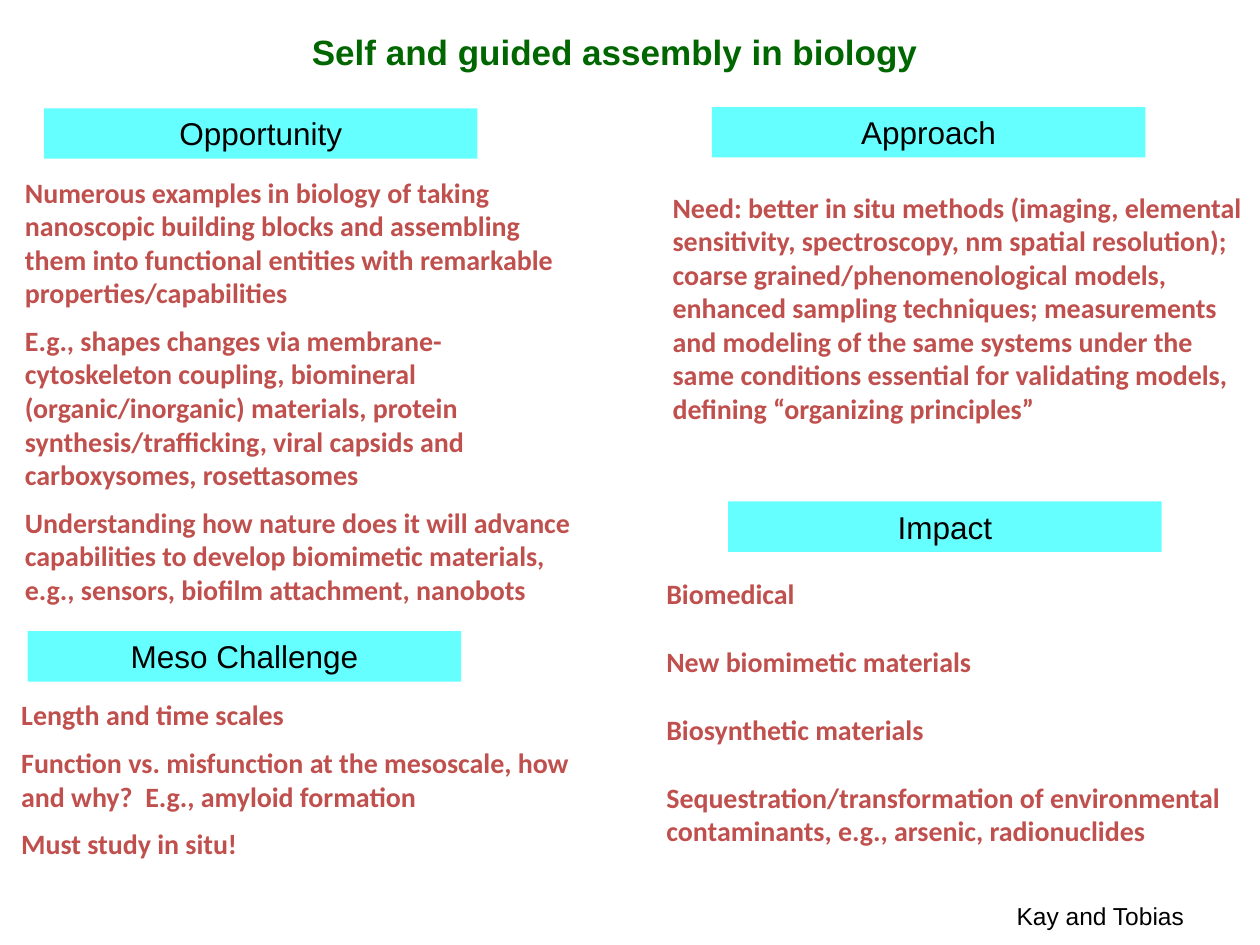
from dataclasses import dataclass

from pptx import Presentation
from pptx.dml.color import RGBColor
from pptx.enum.shapes import MSO_SHAPE
from pptx.enum.text import MSO_ANCHOR, MSO_AUTO_SIZE, PP_ALIGN
from pptx.util import Inches, Pt

RECTANGLE = MSO_SHAPE.RECTANGLE
CENTER, LEFT = PP_ALIGN.CENTER, PP_ALIGN.LEFT
TOP = MSO_ANCHOR.TOP
GROW = MSO_AUTO_SIZE.SHAPE_TO_FIT_TEXT
COLUMNS, ROWS = 100, 75


@dataclass(frozen=True)
class TextStyle:
    size: int
    font: str
    color: str
    bold: bool = False


@dataclass(frozen=True)
class Theme:
    title: TextStyle = TextStyle(20, "Arial", "006600", True)
    heading: TextStyle = TextStyle(18, "Arial", "000000")
    body: TextStyle = TextStyle(16, "Calibri", "C0504D", True)
    credit: TextStyle = TextStyle(14, "Arial", "000000")
    heading_fill: str = "66FFFF"
    paragraph_gap: float = 8
    line_gap: float = 19.5


THEME = Theme()
HEADING_SIZE = (34.4, 4)

HEADINGS = [
    ("Opportunity", 3.5, 8.6),
    ("Meso Challenge", 2.2, 50.1),
    ("Approach", 5.65 * 10, 8.5),
    ("Impact", 57.8, 39.8),
]

BODIES = [
    ((52.4, 14.6, 47.6, 19.7), 0, [
        "Need: better in situ methods (imaging, elemental sensitivity, spectroscopy, "
        "nm spatial resolution); coarse grained/phenomenological models, enhanced "
        "sampling techniques; measurements and modeling of the same systems under the "
        "same conditions essential for validating models, defining “organizing principles”",
    ]),
    ((1, 13.4, 46.6, 39.8), THEME.paragraph_gap, [
        "Numerous examples in biology of taking nanoscopic building blocks and "
        "assembling them into functional entities with remarkable properties/capabilities",
        "E.g., shapes changes via membrane-cytoskeleton coupling, biomineral "
        "(organic/inorganic) materials, protein synthesis/trafficking, viral capsids "
        "and carboxysomes, rosettasomes",
        "Understanding how nature does it will advance capabilities to develop "
        "biomimetic materials, e.g., sensors, biofilm attachment, nanobots",
    ]),
    ((0.7, 54.9, 47.5, 14.4), THEME.paragraph_gap, [
        "Length and time scales",
        "Function vs. misfunction at the mesoscale, how and why?  E.g., amyloid formation",
        "Must study in situ!",
    ]),
    ((51.9, 45.3, 48.1, 22.4), THEME.line_gap, [
        "Biomedical",
        "New biomimetic materials",
        "Biosynthetic materials",
        "Sequestration/transformation of environmental contaminants, e.g., arsenic, "
        "radionuclides",
    ]),
]


def place(presentation, column, row, columns, rows):
    column_width = presentation.slide_width / COLUMNS
    row_height = presentation.slide_height / ROWS
    return (round(column * column_width), round(row * row_height),
            round(columns * column_width), round(rows * row_height))


def write(shape, texts, style, alignment=LEFT, gap=0, wrap=True):
    frame = shape.text_frame
    frame.word_wrap = wrap
    frame.auto_size = GROW
    frame.vertical_anchor = TOP
    for index, text in enumerate(texts):
        paragraph = frame.add_paragraph() if index else frame.paragraphs[0]
        paragraph.alignment = alignment
        if index and gap:
            paragraph.space_before = Pt(gap)
        run = paragraph.add_run()
        run.text = text
        run.font.size = Pt(style.size)
        run.font.name = style.font
        run.font.bold = style.bold
        run.font.color.rgb = RGBColor.from_string(style.color)


def add_text(slide, box, texts, style, **options):
    write(slide.shapes.add_textbox(*box), texts, style, **options)


def add_heading(slide, box, text):
    shape = slide.shapes.add_shape(RECTANGLE, *box)
    shape.shadow.inherit = False
    shape.fill.solid()
    shape.fill.fore_color.rgb = RGBColor.from_string(THEME.heading_fill)
    shape.line.fill.background()
    write(shape, [text], THEME.heading, alignment=CENTER)


def main():
    presentation = Presentation()
    presentation.slide_width = Inches(10)
    presentation.slide_height = Inches(7.5)
    slide = presentation.slides.add_slide(presentation.slide_layouts[6])

    add_text(slide, place(presentation, 3.1, 1.9, 91.4, 4.4),
             ["Self and guided assembly in biology"], THEME.title, alignment=CENTER)
    for text, column, row in HEADINGS:
        add_heading(slide, place(presentation, column, row, *HEADING_SIZE), text)
    for cells, gap, texts in BODIES:
        add_text(slide, place(presentation, *cells), texts, THEME.body, gap=gap)
    add_text(slide, place(presentation, 79.7, 71, 15.4, 3.4),
             ["Kay and Tobias"], THEME.credit, wrap=False)

    presentation.save("out.pptx")


if __name__ == "__main__":
    main()
